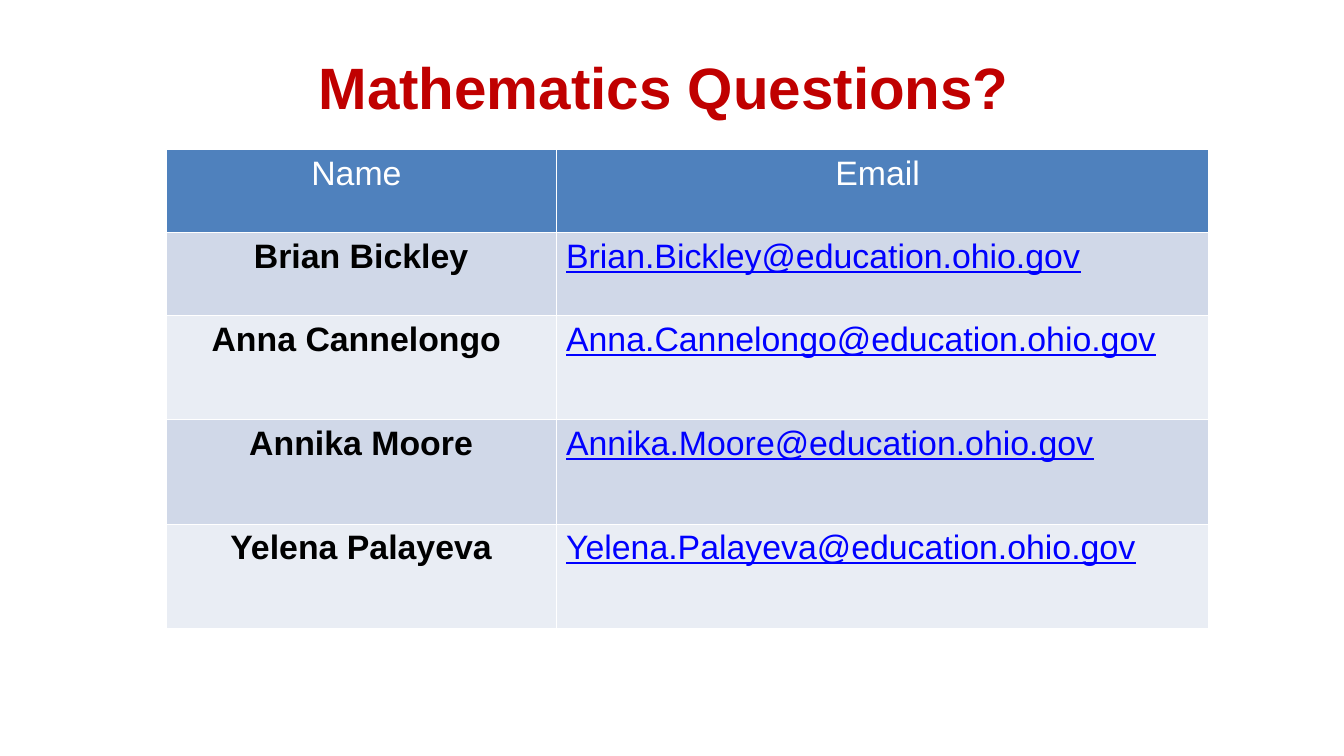
import pptx
import pptx.util
import pptx.dml.color
import pptx.enum.text
import pptx.oxml
import pptx.oxml.ns

Inches = pptx.util.Inches
Pt = pptx.util.Pt
Color = pptx.dml.color.RGBColor
Align = pptx.enum.text.PP_ALIGN

WIDE, HIGH = Inches(16), Inches(9)
RED = Color(0xC0, 0x00, 0x00)
BLUE = Color(0x4F, 0x81, 0xBD)
DARK = Color(0xD0, 0xD8, 0xE8)
LIGHT = Color(0xE9, 0xED, 0xF4)
LINK = Color(0x00, 0x00, 0xFF)
BLACK = Color(0x00, 0x00, 0x00)
WHITE = Color(0xFF, 0xFF, 0xFF)

COLS = (4.64, 7.77)
ROWS = (0.99, 0.99, 1.24, 1.24, 1.24)
HEADS = ("Name ", "Email ")
STAFF = (
    ("Brian Bickley", "Brian.Bickley@education.ohio.gov"),
    ("Anna\u00a0Cannelongo\u00a0", "Anna.Cannelongo@education.ohio.gov"),
    ("Annika Moore", "Annika.Moore@education.ohio.gov"),
    ("Yelena Palayeva", "Yelena.Palayeva@education.ohio.gov"),
)


def write(frame, text, size, color, bold=False, line=False, align=Align.CENTER):
    para = frame.paragraphs[0]
    para.alignment = align
    run = para.add_run()
    run.text = text
    font = run.font
    font.name, font.size = "Arial", Pt(size)
    font.bold, font.underline = bold, line
    font.color.rgb = color


def add_title(slide):
    title = slide.shapes.title
    title.left, title.top = int(WIDE * 0.05), Inches(0.6)
    title.width, title.height = int(WIDE * 0.9), Inches(0.84)
    frame = title.text_frame
    frame.margin_left = frame.margin_right = 0
    frame.margin_top = frame.margin_bottom = 0
    frame.vertical_anchor = pptx.enum.text.MSO_ANCHOR.MIDDLE
    frame.auto_size = pptx.enum.text.MSO_AUTO_SIZE.NONE
    write(frame, "Mathematics Questions? ", 50, RED, bold=True)


def frame_cell(cell, fill):
    cell.margin_left = cell.margin_right = Inches(0.12)
    cell.margin_top = cell.margin_bottom = Inches(0.06)
    props = cell._tc.get_or_add_tcPr()
    for side in "LRTB":
        props.append(pptx.oxml.parse_xml(
            f'<a:ln{side} w="{Pt(1)}" {pptx.oxml.ns.nsdecls("a")}>'
            f'<a:solidFill><a:srgbClr val="{WHITE}"/></a:solidFill></a:ln{side}>'))
    cell.fill.solid()
    cell.fill.fore_color.rgb = fill


def add_grid(slide):
    grid = slide.shapes.add_table(
        len(ROWS), len(COLS), Inches(1.98), Inches(1.78),
        Inches(sum(COLS)), Inches(sum(ROWS))).table
    for col, width in zip(grid.columns, COLS):
        col.width = Inches(width)
    for row, height in zip(grid.rows, ROWS):
        row.height = Inches(height)
    for col, head in enumerate(HEADS):
        cell = grid.cell(0, col)
        frame_cell(cell, BLUE)
        write(cell.text_frame, head, 29, WHITE)
    for row, (name, mail) in enumerate(STAFF, 1):
        fill = DARK if row % 2 else LIGHT
        left, right = grid.cell(row, 0), grid.cell(row, 1)
        frame_cell(left, fill)
        frame_cell(right, fill)
        write(left.text_frame, name, 29, BLACK, bold=True)
        write(right.text_frame, mail, 29, LINK, line=True, align=Align.LEFT)


def main():
    deck = pptx.Presentation()
    deck.slide_width, deck.slide_height = WIDE, HIGH
    slide = deck.slides.add_slide(deck.slide_layouts[5])
    add_title(slide)
    add_grid(slide)
    deck.save("out.pptx")


if __name__ == "__main__":
    main()
